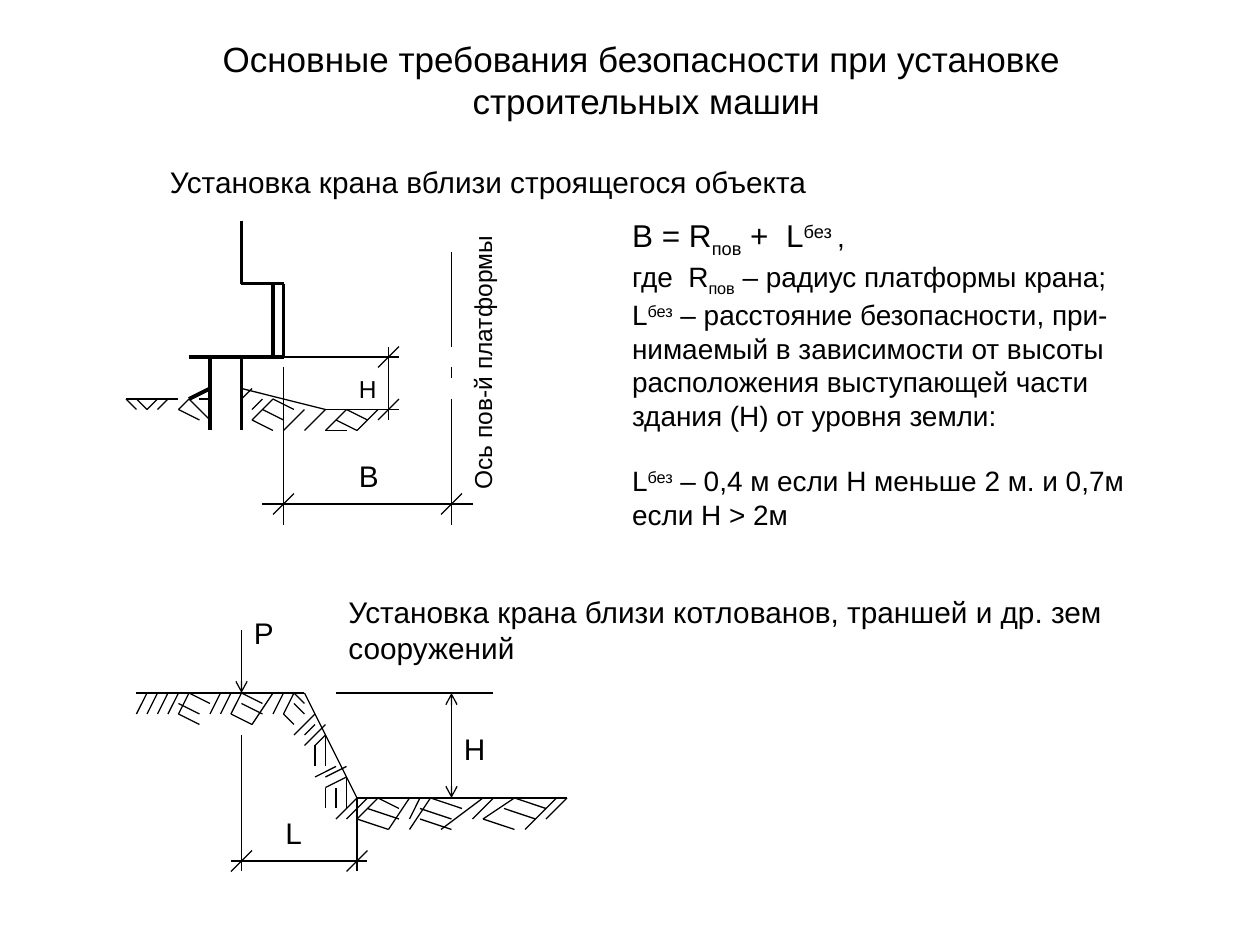
"""Build the slide on safety requirements for placing construction machines."""
from itertools import pairwise

from lxml.etree import SubElement
from pptx import Presentation
from pptx.dml.color import RGBColor
from pptx.enum.shapes import MSO_CONNECTOR as Connector
from pptx.enum.text import MSO_ANCHOR as Anchor, MSO_AUTO_SIZE as AutoSize, PP_ALIGN as Align
from pptx.oxml.ns import qn
from pptx.util import Pt

EMU_PER_PX = 9525
CELL = 8
FONT = "Arial"
COLORS = {"ink": "000000", "paper": "FFFFFF"}
BASELINES = {"sub": "-25000", "sup": "30000"}
THIN, MEDIUM, THICK = 0.75, 1, 2.25

TITLE = ["Основные требования безопасности при установке ", "строительных машин"]
FORMULA = [
    [("В = R", 18), ("пов", 18, "sub"), (" +  L", 18), ("без ", 18, "sup"), (",", 16)],
    [("где  R", 16), ("пов", 16, "sub"), (" – радиус платформы крана;", 16)],
    [("L", 16), ("без", 16, "sup"), (" – расстояние безопасности, при-", 16)],
    [("нимаемый в зависимости от высоты", 16)],
    [("расположения выступающей части", 16)],
    [("здания (Н) от уровня земли:", 16)],
    [("L", 16), ("без", 16, "sup"), (" – 0,4 м если Н меньше 2 м. и 0,7м", 16)],
    [("если Н > 2м", 16)],
]
CONDITION_ROW = 6
LABELS = [
    (["Установка крана вблизи строящегося объекта"], (120, 120, 509, 37), 17, 0),
    (["В"], (264, 344, 35, 37), 17, 0),
    (["Н"], (264, 280, 33, 33), 14, 0),
    (["Ось пов-й платформы"], (261, 259, 214, 33), 14, 270),
    (["Установка крана близи котлованов, траншей и др. зем", "сооружений"],
     (256, 448, 599, 64), 17, 0),
    (["Р"], (184, 464, 35, 37), 17, 0),
    (["L"], (208, 616, 33, 37), 17, 0),
    (["Н"], (344, 552, 36, 37), 17, 0),
]

BUILDING = [
    [(23, 21), (23, 27), (26, 27), (26, 34), (23, 34), (18, 34)],
    [(26, 27), (27, 27), (27, 34), (26, 34)],
    [(20, 34), (20, 41)],
    [(23, 34), (23, 41)],
    [(18, 38), (20, 37)],
]
BUILDING_GROUND = [
    [(12, 38), (14, 38), (17, 38)],
    [(19, 38), (20, 38)],
    [(23, 37), (27, 38), (31, 39), (37, 39), (38, 39)],
]
BUILDING_HATCH = {
    (-1, 1): [(15, 38), (16, 38), (18, 38), (24, 37), (25, 38)],
    (1, 1): [(12, 38), (13, 38)],
    (2, 2): [(18, 38)],
    (-2, 2): [(26, 38), (29, 39), (31, 39), (33, 39), (36, 39)],
    (2, 1): [(17, 39), (26, 38), (25, 39), (24, 40), (33, 39), (32, 40)],
    (2, 0): [(31, 41)],
}
BUILDING_DIMENSIONS = [
    [(27, 35), (27, 50)],
    [(43, 24), (43, 33)],
    [(43, 35), (43, 36)],
    [(43, 38), (43, 50)],
    [(25, 48), (45, 48)],
    [(37, 40), (37, 33)],
]
BUILDING_LEVELS = [[(27, 34), (38, 34)], [(27, 43), (27, 42)]]
PIT_GROUND = [[(13, 66), (29, 66), (34, 76), (54, 76)]]
PIT_HATCH = {
    (-1, 2): [(x, 66) for x in (14, 15, 16, 17, 18, 21, 22, 23, 27, 28)] + [(40, 76)],
    (2, 1): [(18, 66), (17, 67), (17, 68), (23, 66), (23, 67), (22, 68), (36, 76)],
    (-2, 3): [(26, 66), (39, 76), (41, 76)],
    (1, 1): [(28, 66), (28, 67), (27, 68)],
    (-2, 2): [(30, 68), (31, 69)] + [(x, 76) for x in (34, 35, 36, 47, 54)],
    (-1, 1): [(30, 69), (31, 70)],
    (0, 3): [(31, 70), (33, 74)],
    (0, 2): [(30, 71), (31, 75), (32, 75)],
    (-2, 1): [(32, 73), (33, 73), (33, 74)],
    (3, 1): [(35, 77), (34, 78), (41, 76), (40, 77), (40, 78), (49, 76), (48, 77), (46, 78)],
    (-4, 3): [(46, 76)],
    (-3, 2): [(49, 76)],
    (-3, 3): [(53, 76)],
}
PIT_DIMENSIONS = [
    [(23, 70), (23, 83)],
    [(34, 76), (34, 83)],
    [(22, 82), (35, 82)],
    [(32, 66), (47, 66)],
]
TICKS = {(-2, 2): [(28, 47), (44, 47), (38, 38), (38, 33), (24, 81), (35, 81)]}
LOAD_ARROW = [(23, 60), (23, 66)]
DEPTH_ARROW = [(43, 66), (43, 76)]


def px(length):
    return length * EMU_PER_PX


def color(name):
    return RGBColor.from_string(COLORS[name])


def place(shape, box):
    shape.left, shape.top, shape.width, shape.height = map(px, box)


def format_frame(text_frame):
    text_frame.word_wrap = False
    text_frame.auto_size = AutoSize.SHAPE_TO_FIT_TEXT
    text_frame.vertical_anchor = Anchor.TOP


def format_run(run, size):
    run.font.name = FONT
    run.font.size = Pt(size)
    run.font.color.rgb = color("ink")


def write_lines(text_frame, lines, size, align):
    format_frame(text_frame)
    text_frame.text = "\n".join(lines)
    for paragraph in text_frame.paragraphs:
        paragraph.alignment = align
        paragraph.line_spacing = 1.0
        for run in paragraph.runs:
            format_run(run, size)


def write_title(slide):
    title = slide.shapes.title
    place(title, (160, 24, 665, 74))
    write_lines(title.text_frame, TITLE, 20, Align.CENTER)


def write_formula(slide):
    body = slide.placeholders[1]
    place(body, (472, 160, 403, 272))
    text_frame = body.text_frame
    format_frame(text_frame)
    for row, parts in enumerate(FORMULA):
        paragraph = text_frame.add_paragraph() if row else text_frame.paragraphs[0]
        paragraph.space_before = Pt(18.4 if row == CONDITION_ROW else 0)
        paragraph.line_spacing = 1.0
        properties = paragraph._p.get_or_add_pPr()
        properties.set("marL", "0")
        properties.set("indent", "0")
        SubElement(properties, qn("a:buNone"))
        for text, size, *shift in parts:
            run = paragraph.add_run()
            run.text = text
            format_run(run, size)
            for kind in shift:
                run._r.get_or_add_rPr().set("baseline", BASELINES[kind])


def add_label(slide, lines, box, size, rotation):
    label = slide.shapes.add_textbox(*map(px, box))
    label.rotation = rotation
    write_lines(label.text_frame, lines, size, Align.LEFT)


def add_line(slide, start, end, weight=THIN, arrows=()):
    ends = [px(CELL * value) for value in (*start, *end)]
    line = slide.shapes.add_connector(Connector.STRAIGHT, *ends)
    line.line.color.rgb = color("ink")
    line.line.width = Pt(weight)
    for arrow in arrows:
        SubElement(line.line._get_or_add_ln(), qn(f"a:{arrow}"), type="arrow")
    SubElement(line._element.spPr, qn("a:effectLst"))


def add_paths(slide, paths, weight=THIN):
    for points in paths:
        for start, end in pairwise(points):
            add_line(slide, start, end, weight)


def add_hatch(slide, strokes):
    for (across, down), starts in strokes.items():
        for x, y in starts:
            add_line(slide, (x, y), (x + across, y + down))


def main():
    presentation = Presentation()
    presentation.slide_width, presentation.slide_height = px(960), px(720)
    slide = presentation.slides.add_slide(presentation.slide_layouts[1])
    slide.background.fill.solid()
    slide.background.fill.fore_color.rgb = color("paper")
    write_title(slide)
    write_formula(slide)
    add_paths(slide, BUILDING, THICK)
    add_paths(slide, BUILDING_LEVELS, MEDIUM)
    for paths in (BUILDING_GROUND, BUILDING_DIMENSIONS, PIT_GROUND, PIT_DIMENSIONS):
        add_paths(slide, paths)
    for strokes in (BUILDING_HATCH, PIT_HATCH, TICKS):
        add_hatch(slide, strokes)
    add_line(slide, *LOAD_ARROW, arrows=["tailEnd"])
    add_line(slide, *DEPTH_ARROW, arrows=["headEnd", "tailEnd"])
    for label in LABELS:
        add_label(slide, *label)
    presentation.save("out.pptx")


if __name__ == "__main__":
    main()
